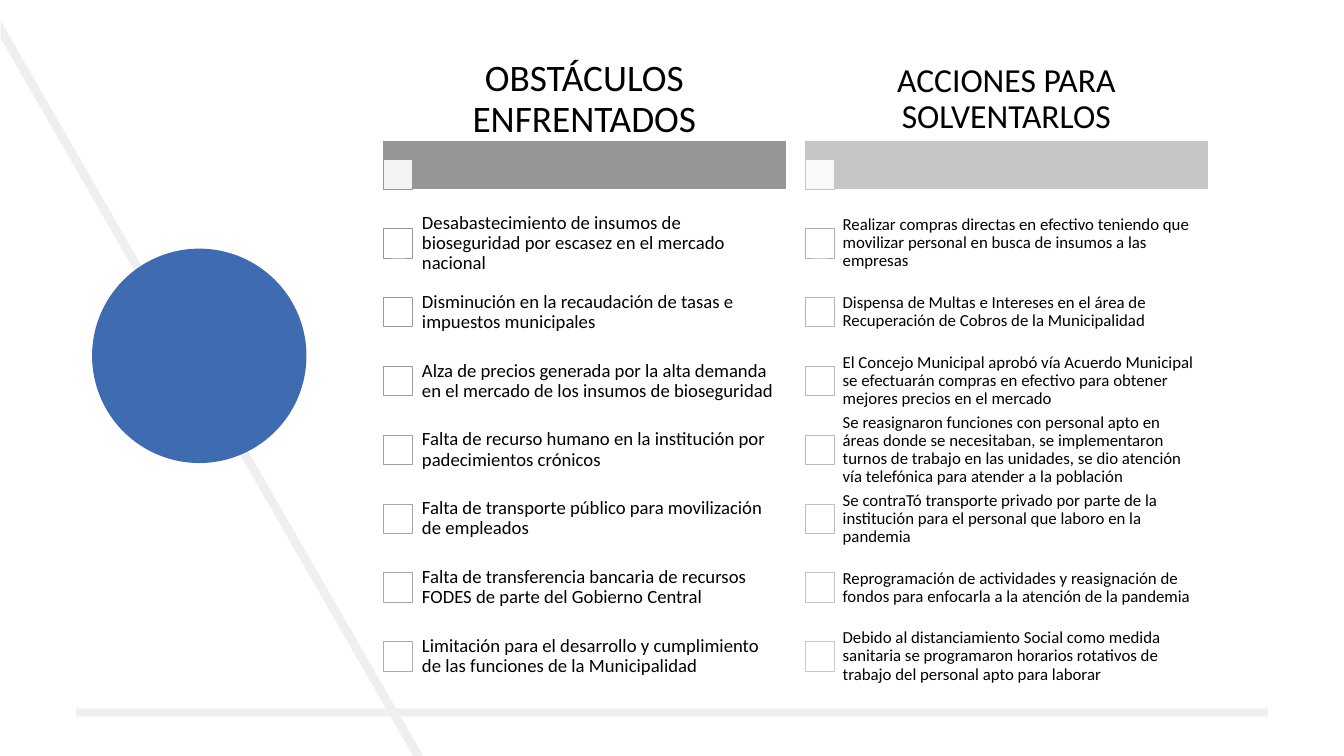
from dataclasses import dataclass

import lxml.etree
import pptx
import pptx.dml.color
import pptx.enum.shapes
import pptx.enum.text
import pptx.oxml.ns
import pptx.util

Inches = pptx.util.Inches
Shape = pptx.enum.shapes.MSO_SHAPE
Align = pptx.enum.text.PP_ALIGN

COLORS = {
    "text": "000000",
    "white": "FFFFFF",
    "pale": "EFEFEF",
    "blue": "3F6BB1",
    "dark": "969696",
    "light": "C6C6C6",
}
FRAME = {
    "word_wrap": True,
    "auto_size": pptx.enum.text.MSO_AUTO_SIZE.NONE,
    "vertical_anchor": pptx.enum.text.MSO_ANCHOR.MIDDLE,
}
TOP, PITCH = 3.11, 1.025
WIDTH, BOX, INDENT = 5.99, 0.44, 0.42


@dataclass
class Column:
    left: float
    tone: str
    title: str
    title_size: int
    title_pads: tuple[float, float]
    size: int
    pad: float
    items: list[str]


COLUMNS = [
    Column(5.7, "dark", "OBSTÁCULOS ENFRENTADOS", 40, (0.08, 0.06), 20, 0.16, [
        "Desabastecimiento de insumos de bioseguridad por escasez en el mercado nacional",
        "Disminución en la recaudación de tasas e impuestos municipales",
        "Alza de precios generada por la alta demanda en el mercado de los insumos de bioseguridad",
        "Falta de recurso humano en la institución por padecimientos crónicos",
        "Falta de transporte público para movilización de empleados",
        "Falta de transferencia bancaria de recursos FODES de parte del Gobierno Central",
        "Limitación para el desarrollo y cumplimiento de las funciones de la Municipalidad",
    ]),
    Column(11.98, "light", "ACCIONES PARA SOLVENTARLOS", 36, (0.07, 0.05), 18, 0.14, [
        "Realizar compras directas en efectivo teniendo que movilizar personal en busca de insumos"
        " a las empresas",
        "Dispensa de Multas e Intereses en el área de Recuperación de Cobros de la Municipalidad",
        "El Concejo Municipal aprobó vía Acuerdo Municipal se efectuarán compras en efectivo"
        " para obtener mejores precios en el mercado",
        "Se reasignaron funciones con personal apto en áreas donde se necesitaban, se"
        " implementaron turnos de trabajo en las unidades, se dio atención vía telefónica"
        " para atender a la población",
        "Se contraTó transporte privado por parte de la institución para el personal que laboro"
        " en la pandemia",
        "Reprogramación de actividades y reasignación de fondos para enfocarla a la atención"
        " de la pandemia",
        "Debido al distanciamiento Social como medida sanitaria se programaron horarios rotativos"
        " de trabajo del personal apto para laborar",
    ]),
]


def paint(shape, fill: str, line: str = "") -> None:
    shape.shadow.inherit = False
    shape.fill.solid()
    shape.fill.fore_color.rgb = pptx.dml.color.RGBColor.from_string(fill)
    if line:
        shape.line.color.rgb = pptx.dml.color.RGBColor.from_string(line)
        shape.line.width = pptx.util.Pt(1)
    else:
        shape.line.fill.background()


def add_block(shapes, kind, spot: tuple, fill: str, line: str = ""):
    shape = shapes.add_shape(kind, *map(Inches, spot))
    paint(shape, fill, line)
    return shape


def fade(shape, percent: int) -> None:
    qn = pptx.oxml.ns.qn
    color = shape.fill._xPr.find(qn("a:solidFill"))[0]
    lxml.etree.SubElement(color, qn("a:alpha"), val=str(percent * 1000))


def add_text(shapes, spot: tuple, text: str, size: int, pads: tuple, align) -> None:
    frame = shapes.add_textbox(*map(Inches, spot)).text_frame
    side, edge = map(Inches, pads)
    margins = {"margin_left": side, "margin_right": side,
               "margin_top": edge, "margin_bottom": edge}
    for name, value in (FRAME | margins).items():
        setattr(frame, name, value)
    para = frame.paragraphs[0]
    for name, value in {"alignment": align, "line_spacing": 0.9}.items():
        setattr(para, name, value)
    run = para.add_run()
    run.text = text
    for name, value in {"name": "Calibri", "size": pptx.util.Pt(size)}.items():
        setattr(run.font, name, value)
    run.font.color.rgb = pptx.dml.color.RGBColor.from_string(COLORS["text"])


def shade(index: int, count: int) -> str:
    first, last = (int(COLORS[name][:2], 16) for name in ("dark", "light"))
    level = round(first + (last - first) * index / (count - 1))
    return f"{level:02X}" * 3


def add_column(shapes, column: Column, start: int, count: int) -> None:
    left, tone = column.left, COLORS[column.tone]
    add_block(shapes, Shape.RECTANGLE, (left, 2.11, WIDTH, 0.7), tone, tone)
    mark = add_block(shapes, Shape.RECTANGLE, (left, 2.38, BOX, BOX), COLORS["white"], tone)
    fade(mark, 90)
    add_text(shapes, (left, 0.85, WIDTH, 1.27), column.title,
             column.title_size, column.title_pads, Align.CENTER)
    for row, text in enumerate(column.items):
        top = TOP + row * PITCH
        add_block(shapes, Shape.RECTANGLE, (left, top + 0.29, BOX, BOX),
                  COLORS["white"], shade(start + row, count))
        add_text(shapes, (left + INDENT, top, WIDTH - INDENT, 1.02), text,
                 column.size, (column.pad, column.pad), Align.LEFT)


def main() -> None:
    deck = pptx.Presentation()
    deck.slide_width, deck.slide_height = Inches(20), Inches(11.25)
    shapes = deck.slides.add_slide(deck.slide_layouts[6]).shapes

    stripe = shapes.build_freeform(Inches(6.3), Inches(11.25))
    points = [(6.15, 11.25), (0.01, 0.57), (0.01, 0.31)]
    stripe.add_line_segments([(Inches(x), Inches(y)) for x, y in points], close=True)
    paint(stripe.convert_to_shape(), COLORS["pale"])
    add_block(shapes, Shape.OVAL, (1.37, 3.7, 3.19, 3.19), COLORS["blue"])
    add_block(shapes, Shape.RECTANGLE, (1.13, 10.54, 17.74, 0.12), COLORS["pale"])

    group = shapes.add_group_shape()
    count = sum(len(column.items) for column in COLUMNS)
    start = 0
    for column in COLUMNS:
        add_column(group.shapes, column, start, count)
        start += len(column.items)
    deck.save("out.pptx")


if __name__ == "__main__":
    main()
